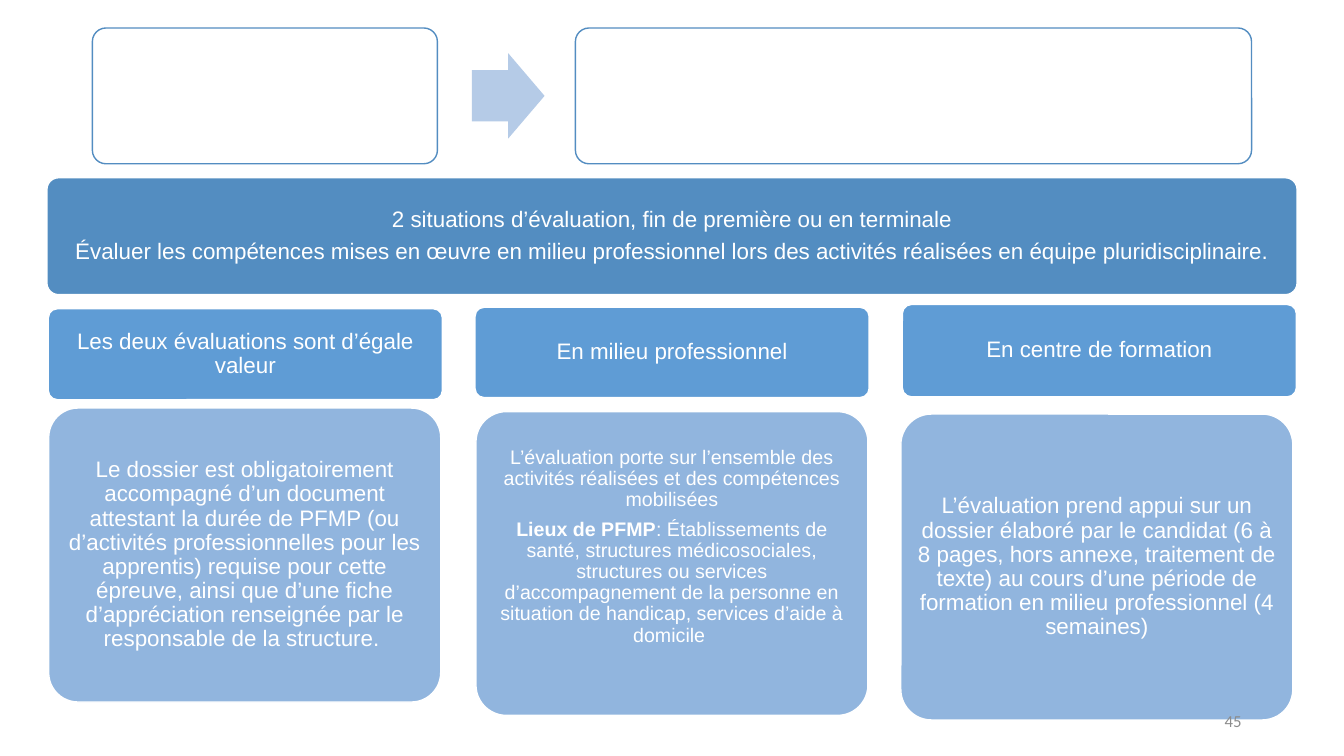
from pptx import Presentation
from pptx import util as u
from pptx.dml.color import RGBColor
from pptx.enum import shapes, text

WHITE = RGBColor(0xFF, 0xFF, 0xFF)
DEEP_BLUE = RGBColor(0x53, 0x8D, 0xC1)
HEADING_BLUE = RGBColor(0x5F, 0x9C, 0xD5)
DETAIL_BLUE = RGBColor(0x91, 0xB5, 0xDE)
ARROW_BLUE = RGBColor(0xB5, 0xCB, 0xE7)
GREY = RGBColor(0x8C, 0x8C, 0x8C)

BANNER = [
    [("2 situations d’évaluation, fin de première ou en terminale", False)],
    [("Évaluer les compétences mises en œuvre en milieu professionnel lors des "
      "activités réalisées en équipe pluridisciplinaire.", False)],
]
COLUMNS = [
    {
        "heading": ("Les deux évaluations sont d’égale valeur", (34.5, 220.5, 281.5, 65)),
        "box": (34.8, 291.5, 280, 210),
        "details": [[("Le dossier est obligatoirement accompagné d’un document attestant la "
                      "durée de PFMP (ou d’activités professionnelles pour les apprentis) "
                      "requise pour cette épreuve, ainsi que d’une fiche d’appréciation "
                      "renseignée par le responsable de la structure. ", False)]],
        "format": {},
    },
    {
        "heading": ("En milieu professionnel", (339.3, 219.5, 281.5, 64.5)),
        "box": (340, 294, 280, 217),
        "details": [
            [("L’évaluation porte sur l’ensemble des activités réalisées et des "
              "compétences mobilisées", False)],
            [("Lieux de PFMP", True),
             (": Établissements de santé, structures médicosociales, structures ou "
              "services d’accompagnement de la personne en situation de handicap, "
              "services d’aide à domicile ", False)],
        ],
        "format": {"size": 14, "bottom": 29},
    },
    {
        "heading": ("En centre de formation", (644.5, 217.5, 281.5, 66)),
        "box": (643.5, 295.8, 280, 218.5),
        "details": [[("L’évaluation prend appui sur un dossier élaboré par le candidat (6 à "
                      "8 pages, hors annexe, traitement de texte) au cours d’une période de "
                      "formation en milieu professionnel (4 semaines)", False)]],
        "format": {},
    },
]


def set_attributes(target, values):
    """Apply each named format value to the target."""
    for name, value in values.items():
        setattr(target, name, value)


def add_block(slide, kind, box, fill, line=None, adjustment=0.1):
    """Add a filled preset shape with an optional one-point outline."""
    shape = slide.shapes.add_shape(kind, *map(u.Pt, box))
    shape.shadow.inherit = False
    shape.adjustments[0] = adjustment
    shape.fill.solid()
    shape.fill.fore_color.rgb = fill
    if line is None:
        shape.line.fill.background()
    else:
        shape.line.color.rgb = line
        shape.line.width = u.Pt(1)
    return shape


def add_runs(paragraph, runs, size, font, color):
    """Add the text and bold pairs as formatted runs."""
    for wording, bold in runs:
        run = paragraph.add_run()
        run.text = wording
        set_attributes(run.font, {"name": font, "size": u.Pt(size), "bold": bold})
        run.font.color.rgb = color


def add_card(slide, box, fill, paragraphs, size=16, bottom=5):
    """Add a rounded card with centred white paragraphs."""
    shape = add_block(slide, shapes.MSO_SHAPE.ROUNDED_RECTANGLE, box, fill, WHITE)
    frame = shape.text_frame
    set_attributes(frame, {
        "word_wrap": True,
        "vertical_anchor": text.MSO_ANCHOR.MIDDLE,
        "margin_left": u.Pt(5),
        "margin_right": u.Pt(5),
        "margin_top": u.Pt(5),
        "margin_bottom": u.Pt(bottom),
    })
    for index, runs in enumerate(paragraphs):
        paragraph = frame.add_paragraph() if index else frame.paragraphs[0]
        last = index == len(paragraphs) - 1
        set_attributes(paragraph, {
            "alignment": text.PP_ALIGN.CENTER,
            "line_spacing": 0.9,
            "space_after": u.Pt(0 if last else 6),
        })
        add_runs(paragraph, runs, size, "Arial", WHITE)


def add_slide_number(slide, number):
    """Add the grey page number at the bottom right."""
    frame = slide.shapes.add_textbox(*map(u.Pt, (678, 500.5, 216, 28.75))).text_frame
    set_attributes(frame, {"word_wrap": True, "vertical_anchor": text.MSO_ANCHOR.MIDDLE})
    paragraph = frame.paragraphs[0]
    paragraph.alignment = text.PP_ALIGN.RIGHT
    add_runs(paragraph, [(number, False)], 12, "Calibri", GREY)


def main():
    """Build the evaluation slide and save it."""
    presentation = Presentation()
    set_attributes(presentation, {"slide_width": u.Pt(960), "slide_height": u.Pt(540)})
    slide = presentation.slides.add_slide(presentation.slide_layouts[6])

    for left, width in ((66, 246.5), (411, 483)):
        add_block(slide, shapes.MSO_SHAPE.ROUNDED_RECTANGLE, (left, 20, width, 97),
                  WHITE, DEEP_BLUE)
    arrow = add_block(slide, shapes.MSO_SHAPE.RIGHT_ARROW, (337, 38, 52, 61),
                      ARROW_BLUE, adjustment=0.6)
    arrow.adjustments[1] = 0.5

    add_card(slide, (33.5, 127, 893, 83.5), DEEP_BLUE, BANNER)
    for column in COLUMNS:
        heading, heading_box = column["heading"]
        add_card(slide, heading_box, HEADING_BLUE, [[(heading, False)]])
        add_card(slide, column["box"], DETAIL_BLUE, column["details"], **column["format"])
    add_slide_number(slide, "45")
    presentation.save("out.pptx")


if __name__ == "__main__":
    main()
